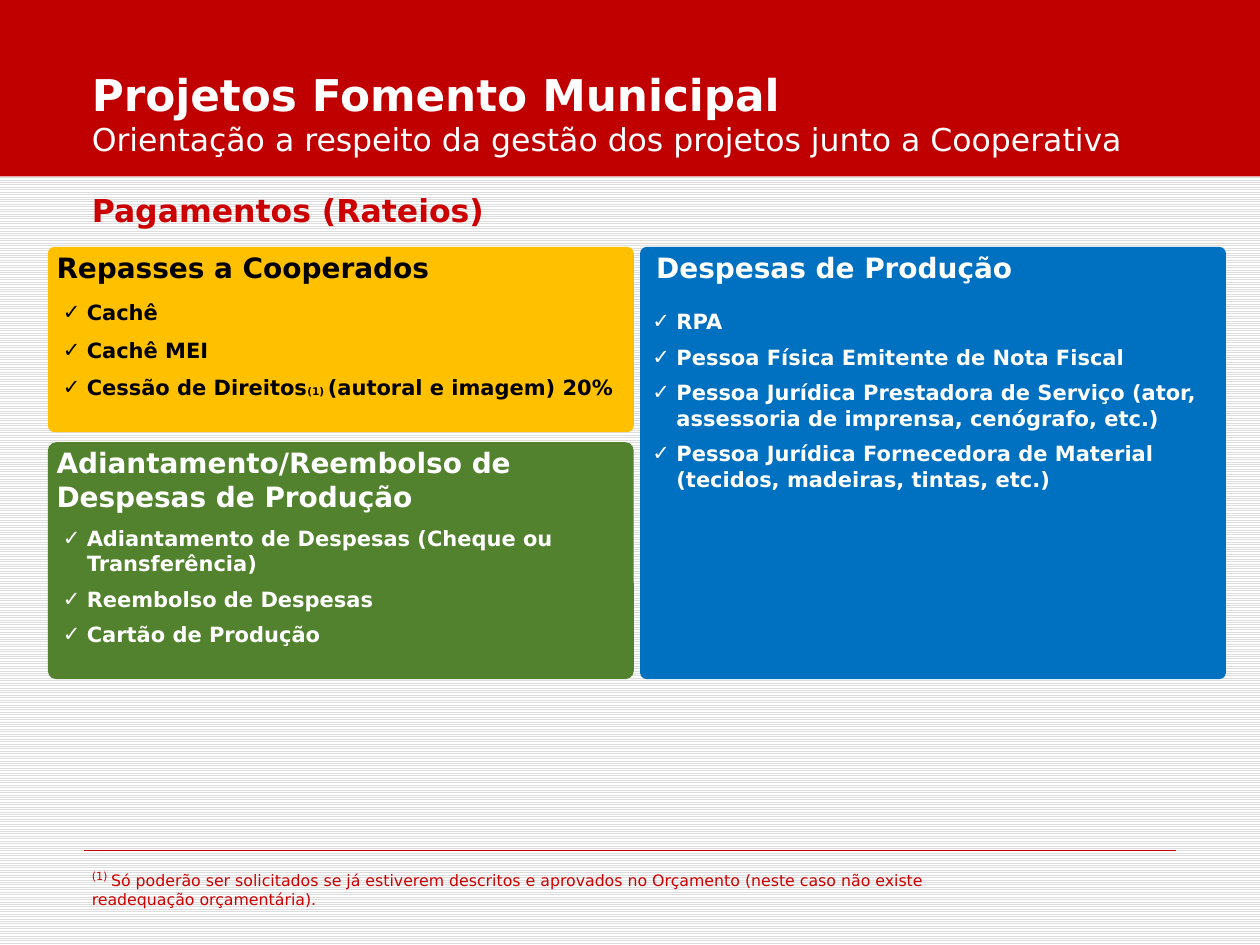
from collections import namedtuple
from dataclasses import dataclass

from lxml.etree import SubElement
from pptx import Presentation
from pptx.dml.color import RGBColor
from pptx.enum.dml import MSO_PATTERN
from pptx.enum.shapes import MSO_CONNECTOR, MSO_SHAPE
from pptx.enum.text import MSO_ANCHOR
from pptx.oxml.ns import qn
from pptx.util import Inches, Pt


@dataclass(frozen=True)
class Theme:
    font: str = "DejaVu Sans"
    red: str = "CC0000"
    banner: str = "C00000"
    yellow: str = "FFC000"
    blue: str = "0070C0"
    green: str = "52822E"
    black: str = "000000"
    white: str = "FFFFFF"
    stripe: str = "DDDDDD"
    title: int = 25
    subtitle: int = 18
    heading: int = 16
    item: int = 12
    note: int = 9
    note_mark: int = 11
    item_mark: int = 6


THEME = Theme()
SLIDE_WIDTH, SLIDE_HEIGHT = Inches(10), Inches(7.5)
COLUMNS, ROWS = 100, 75

# Every Box is given in grid columns and rows.
Box = namedtuple("Box", "left top width height")


def on_grid(box):
    column, row = SLIDE_WIDTH / COLUMNS, SLIDE_HEIGHT / ROWS
    return [round(value * unit) for value, unit in zip(box, (column, row, column, row))]


def rgb(colour):
    return RGBColor.from_string(colour)


def add_check_mark(paragraph):
    properties = paragraph._p.get_or_add_pPr()
    indent = Inches(0.19)
    properties.set("marL", str(indent))
    properties.set("indent", str(-indent))
    SubElement(properties, qn("a:buFont"), typeface=THEME.font)
    SubElement(properties, qn("a:buChar"), char="✓")


def add_text(slide, box, paragraphs, *, size, colour, bold=False, checked=False,
             gap=0, anchor=MSO_ANCHOR.TOP):
    """Each paragraph is a string or a list of (text, overrides) runs."""
    frame = slide.shapes.add_textbox(*on_grid(box)).text_frame
    frame.word_wrap = True
    frame.vertical_anchor = anchor
    for index, runs in enumerate(paragraphs):
        paragraph = frame.paragraphs[0] if index == 0 else frame.add_paragraph()
        if checked:
            add_check_mark(paragraph)
        if index and gap:
            paragraph.space_before = Pt(gap)
        for words, overrides in [(runs, {})] if isinstance(runs, str) else runs:
            run = paragraph.add_run()
            run.text = words
            run.font.name = THEME.font
            run.font.size = Pt(overrides.get("size", size))
            run.font.bold = overrides.get("bold", bold)
            run.font.color.rgb = rgb(colour)
            if "raised" in overrides:
                run.font._element.set("baseline", str(overrides["raised"] * 1000))


def add_panel(slide, box, colour, preset=MSO_SHAPE.RECTANGLE):
    panel = slide.shapes.add_shape(preset, *on_grid(box))
    panel.shadow.inherit = False
    panel.fill.solid()
    panel.fill.fore_color.rgb = rgb(colour)
    panel.line.fill.background()
    return panel


def paint_background(slide):
    fill = slide.background.fill
    fill.patterned()
    fill.pattern = MSO_PATTERN.LIGHT_HORIZONTAL
    fill.fore_color.rgb = rgb(THEME.stripe)
    fill.back_color.rgb = rgb(THEME.white)


def add_banner(slide, box, title, subtitle):
    add_panel(slide, box, THEME.banner)
    title_box = Box(box.left + 6.3, box.top, 87.5, box.height - 1)
    add_text(slide, title_box,
             [title, [(subtitle, {"size": THEME.subtitle, "bold": False})]],
             size=THEME.title, colour=THEME.white, bold=True, anchor=MSO_ANCHOR.BOTTOM)


def add_card(slide, box, heading, items, *, fill, ink, corner=0.035,
             heading_shift=-0.3, heading_height=3.7, list_shift=0.2, list_top=3.7, gap=6):
    card = add_panel(slide, box, fill, MSO_SHAPE.ROUNDED_RECTANGLE)
    card.adjustments[0] = corner
    heading_box = Box(box.left + heading_shift, box.top - 0.2, 46.8, heading_height)
    add_text(slide, heading_box, [heading], size=THEME.heading, colour=ink, bold=True)
    list_box = Box(box.left + list_shift, box.top + list_top, 46.8,
                   box.height - list_top - 1.5)
    add_text(slide, list_box, items, size=THEME.item, colour=ink, bold=True,
             checked=True, gap=gap)


def add_cards(slide, box):
    gutter = 0.5
    width = (box.width - gutter) / 2
    upper, lower = 14.7, 18.8
    add_card(slide, Box(box.left, box.top, width, upper), "Repasses a Cooperados",
             ["Cachê", "Cachê MEI",
              [("Cessão de Direitos", {}), ("(1) ", {"size": THEME.item_mark}),
               ("(autoral e imagem) 20%", {})]],
             fill=THEME.yellow, ink=THEME.black, gap=7)
    add_card(slide, Box(box.left + width + gutter, box.top, width, box.height),
             "Despesas de Produção",
             ["RPA", "Pessoa Física Emitente de Nota Fiscal",
              "Pessoa Jurídica Prestadora de Serviço (ator, assessoria de imprensa, "
              "cenógrafo, etc.)",
              "Pessoa Jurídica Fornecedora de Material (tecidos, madeiras, tintas, etc.)"],
             fill=THEME.blue, ink=THEME.white, corner=0.015,
             heading_shift=0.3, list_shift=0, list_top=4.4)
    add_card(slide, Box(box.left, box.top + box.height - lower, width, lower),
             "Adiantamento/Reembolso de Despesas de Produção",
             ["Adiantamento de Despesas (Cheque ou Transferência)",
              "Reembolso de Despesas", "Cartão de Produção"],
             fill=THEME.green, ink=THEME.white, heading_height=6.4, list_top=6.1)


def add_footnote(slide, box, mark, note):
    left, top, width, _ = on_grid(box)
    rule = slide.shapes.add_connector(MSO_CONNECTOR.STRAIGHT, left, top, left + width, top)
    rule.line.color.rgb = rgb(THEME.red)
    rule.line.width = Pt(0.25)
    SubElement(rule._element.spPr, qn("a:effectLst"))
    note_box = Box(box.left - 0.4, box.top + 0.8, 72.1, box.height - 0.8)
    add_text(slide, note_box,
             [[(mark, {"size": THEME.note_mark, "raised": 30}), (note, {})]],
             size=THEME.note, colour=THEME.red)


def main():
    deck = Presentation()
    deck.slide_width, deck.slide_height = SLIDE_WIDTH, SLIDE_HEIGHT
    slide = deck.slides.add_slide(deck.slide_layouts[6])
    paint_background(slide)
    add_banner(slide, Box(0, 0, COLUMNS, 14), "Projetos Fomento Municipal",
               "Orientação a respeito da gestão dos projetos junto a Cooperativa")
    add_text(slide, Box(6.3, 14.7, 83.1, 4), ["Pagamentos (Rateios)"],
             size=THEME.subtitle, colour=THEME.red, bold=True)
    add_cards(slide, Box(3.8, 19.6, 93.5, 34.3))
    add_footnote(slide, Box(6.7, 67.5, 86.6, 6), "(1) ",
                 "Só poderão ser solicitados se já estiverem descritos e aprovados no "
                 "Orçamento (neste caso não existe readequação orçamentária).")
    deck.save("out.pptx")


if __name__ == "__main__":
    main()
